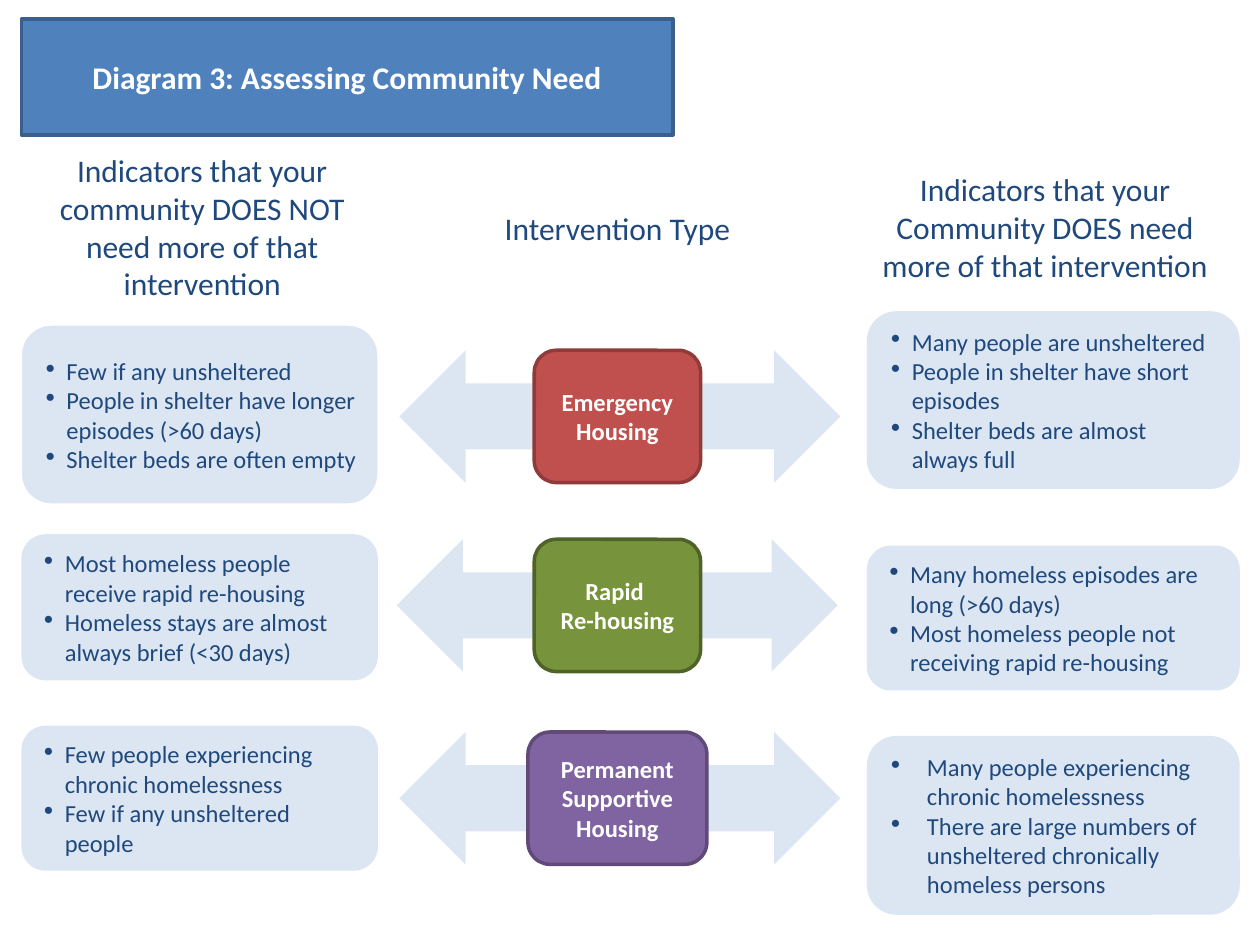
import pptx
import pptx.dml.color
import pptx.enum.shapes
import pptx.enum.text
import pptx.oxml.ns
import pptx.util
from lxml import etree

PX = 9144  # EMU per px, 100 px to the inch
SHAPES = pptx.enum.shapes.MSO_SHAPE
CENTER = pptx.enum.text.PP_ALIGN.CENTER
LEFT = pptx.enum.text.PP_ALIGN.LEFT
NAVY, PALE, WHITE = "1F497D", "DCE6F2", "FFFFFF"

HEADINGS = [
    ((21, 115, 279, 133), "Indicators that your community DOES NOT need more of that intervention"),
    ((369, 161, 242, 41), "Intervention Type"),
    ((688, 130, 283, 102), "Indicators that your Community DOES need more of that intervention"),
]

# Each intervention: label, label box, fill, outline, arrow left
INTERVENTIONS = [
    ("Emergency Housing", (424, 278, 132, 105), "C0504D", "8E3B39", 317),
    ("Rapid \vRe-housing", (424, 428, 132, 105), "77933C", "4F6228", 315),
    ("Permanent Supportive Housing", (419, 581, 142, 105), "8064A2", "5F4A78", 317),
]

# Each indicator card: top, height, bullet indent, outline, items
LESS_NEED = [
    (258, 142, 19, WHITE, ["Few if any unsheltered",
                           "People in shelter have longer episodes (>60 days)",
                           "Shelter beds are often empty"]),
    (424, 116, 19, None, ["Most homeless people receive rapid re-housing",
                          "Homeless stays are almost always brief (<30 days)"]),
    (576, 115, 19, None, ["Few people experiencing chronic homelessness",
                          "Few if any unsheltered people"]),
]
MORE_NEED = [
    (247, 141, 19, None, ["Many people are unsheltered",
                          "People in shelter have short episodes",
                          "Shelter beds are almost always full"]),
    (433, 115, 19, None, ["Many homeless episodes are long (>60 days)",
                          "Most homeless people not receiving rapid re-housing"]),
    (584, 142, 31, None, ["Many people experiencing chronic homelessness",
                          "There are large numbers of unsheltered chronically homeless persons"]),
]


def emu(box):
    return [px * PX for px in box]


def rgb(value):
    return pptx.dml.color.RGBColor.from_string(value)


def paint(shape, fill, outline=None, width=2):
    shape.fill.solid()
    shape.fill.fore_color.rgb = rgb(fill)
    if outline:
        shape.line.color.rgb = rgb(outline)
        shape.line.width = pptx.util.Pt(width)
    else:
        shape.line.fill.background()


def add_block(slide, kind, box, fill, outline=None, width=2):
    block = slide.shapes.add_shape(kind, *emu(box))
    block.shadow.inherit = False
    paint(block, fill, outline, width)
    return block


def write(shape, text, size, color, bold=False, align=CENTER,
          anchor=pptx.enum.text.MSO_ANCHOR.MIDDLE):
    frame = shape.text_frame
    frame.text = text
    frame.word_wrap = True
    frame.auto_size = pptx.enum.text.MSO_AUTO_SIZE.NONE
    frame.vertical_anchor = anchor
    for paragraph in frame.paragraphs:
        paragraph.alignment = align
        for run in paragraph.runs:
            run.font.name = "Calibri"
            run.font.size = pptx.util.Pt(size)
            run.font.bold = bold
            run.font.color.rgb = rgb(color)


def add_bullet(paragraph, indent):
    properties = paragraph._p.get_or_add_pPr()
    properties.set("marL", str(indent * PX))
    properties.set("indent", str(-indent * PX))
    etree.SubElement(properties, pptx.oxml.ns.qn("a:buChar"), char="∙")


def place_title(slide, box):
    title = slide.shapes.title
    title.left, title.top, title.width, title.height = emu(box)
    # Rounded outline for the title placeholder
    outline = etree.Element(pptx.oxml.ns.qn("a:prstGeom"), prst="roundRect")
    etree.SubElement(outline, pptx.oxml.ns.qn("a:avLst"))
    title._element.spPr.find(pptx.oxml.ns.qn("a:xfrm")).addnext(outline)
    paint(title, "4F81BD", "3A5F8C")
    write(title, "Diagram 3: Assessing Community Need", 18, WHITE, bold=True)


def add_heading(slide, box, text):
    heading = slide.shapes.add_textbox(*emu(box))
    write(heading, text, 18, NAVY, anchor=pptx.enum.text.MSO_ANCHOR.TOP)


def add_intervention(slide, label, box, fill, outline, arrow_left):
    arrow_box = (arrow_left, box[1], 350, box[3])
    add_block(slide, SHAPES.LEFT_RIGHT_ARROW, arrow_box, PALE)
    intervention = add_block(slide, SHAPES.ROUNDED_RECTANGLE, box, fill, outline)
    write(intervention, label, 14, WHITE, bold=True)


def add_indicators(slide, left, width, cards):
    for top, height, indent, outline, items in cards:
        card = add_block(slide, SHAPES.ROUNDED_RECTANGLE,
                         (left, top, width, height), PALE, outline, 0.75)
        write(card, "\n".join(items), 14, NAVY, align=LEFT)
        for paragraph in card.text_frame.paragraphs:
            add_bullet(paragraph, indent)


def main():
    deck = pptx.Presentation()
    deck.slide_width, deck.slide_height = emu((1000, 750))
    slide = deck.slides.add_slide(deck.slide_layouts.get_by_name("Title Only"))

    place_title(slide, (17, 15, 517, 92))
    for box, text in HEADINGS:
        add_heading(slide, box, text)
    for intervention in INTERVENTIONS:
        add_intervention(slide, *intervention)
    add_indicators(slide, 17, 283, LESS_NEED)
    add_indicators(slide, 688, 296, MORE_NEED)

    deck.save("out.pptx")


if __name__ == "__main__":
    main()
